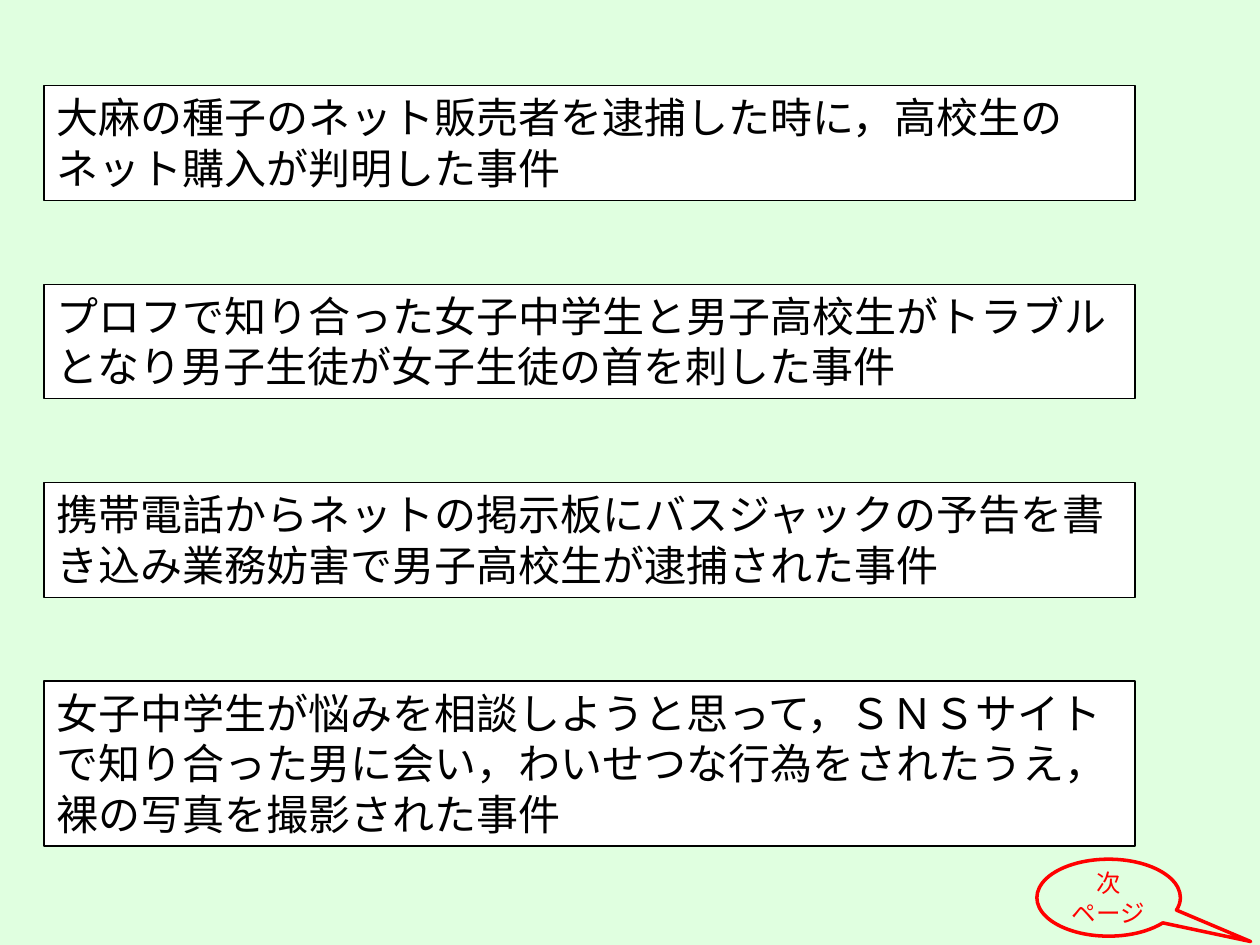
from pptx import Presentation
from pptx.dml.color import RGBColor
from pptx.enum.shapes import MSO_SHAPE as Shape
from pptx.enum.text import MSO_ANCHOR as Anchor, MSO_AUTO_SIZE as AutoSize, PP_ALIGN as Align
from pptx.util import Pt

COLORS = {"background": "E0FFE0", "box": "FFFFFF", "ink": "000000", "accent": "FF0000"}
FONT = "Calibri"

LEFT, TOP, WIDTH = 25.2, 49, 623.5
PITCH = 113.4
PADDING, LINE_HEIGHT = 7.9, 28.8

# Each case with the number of lines it fills
CASES = [
    ("大麻の種子のネット販売者を逮捕した時に，高校生のネット購入が判明した事件", 2),
    ("プロフで知り合った女子中学生と男子高校生がトラブルとなり男子生徒が女子生徒の首を刺した事件", 2),
    ("携帯電話からネットの掲示板にバスジャックの予告を書き込み業務妨害で男子高校生が逮捕された事件", 2),
    ("女子中学生が悩みを相談しようと思って，ＳＮＳサイトで知り合った男に会い，"
     "わいせつな行為をされたうえ，裸の写真を撮影された事件", 3),
]


def color(name):
    return RGBColor.from_string(COLORS[name])


def write_text(frame, *lines, size, ink, align=Align.LEFT, anchor=Anchor.TOP):
    """Write each line as a paragraph of its own."""
    frame.word_wrap = True
    frame.vertical_anchor = anchor
    for index, line in enumerate(lines):
        para = frame.add_paragraph() if index else frame.paragraphs[0]
        para.alignment = align
        span = para.add_run()
        span.text = line
        span.font.name = FONT
        span.font.size = Pt(size)
        span.font.color.rgb = color(ink)


class SlideBuilder:
    def __init__(self, page):
        self.page = page
        page.background.fill.solid()
        page.background.fill.fore_color.rgb = color("background")

    def outline(self, kind, left, top, width, height, line, weight):
        shape = self.page.shapes.add_shape(kind, Pt(left), Pt(top), Pt(width), Pt(height))
        shape.shadow.inherit = False
        shape.fill.background()
        shape.line.color.rgb = color(line)
        shape.line.width = Pt(weight)
        return shape

    def case_box(self, text, top, height):
        box = self.outline(Shape.RECTANGLE, LEFT, top, WIDTH, height, "ink", 0.75)
        box.fill.solid()
        box.fill.fore_color.rgb = color("box")
        write_text(box.text_frame, text, size=24, ink="ink")
        box.text_frame.auto_size = AutoSize.SHAPE_TO_FIT_TEXT

    def callout(self, *lines, left, top, width, height, tip):
        """Draw a speech bubble; tip is the tail's end, as shares of the size from the centre."""
        bubble = self.outline(Shape.OVAL_CALLOUT, left, top, width, height, "accent", 2)
        bubble.adjustments[0], bubble.adjustments[1] = tip
        frame = bubble.text_frame
        frame.margin_left = frame.margin_right = 0
        write_text(frame, *lines, size=14, ink="accent", align=Align.CENTER, anchor=Anchor.MIDDLE)


def main():
    deck = Presentation()
    deck.slide_width, deck.slide_height = Pt(720), Pt(540)
    builder = SlideBuilder(deck.slides.add_slide(deck.slide_layouts[6]))
    for row, (text, line_count) in enumerate(CASES):
        builder.case_box(text, TOP + row * PITCH, PADDING + line_count * LINE_HEIGHT)
    builder.callout("次", "ページ", left=592.5, top=491, width=82, height=44, tip=(0.99, 0.57))
    deck.save("out.pptx")


if __name__ == "__main__":
    main()
